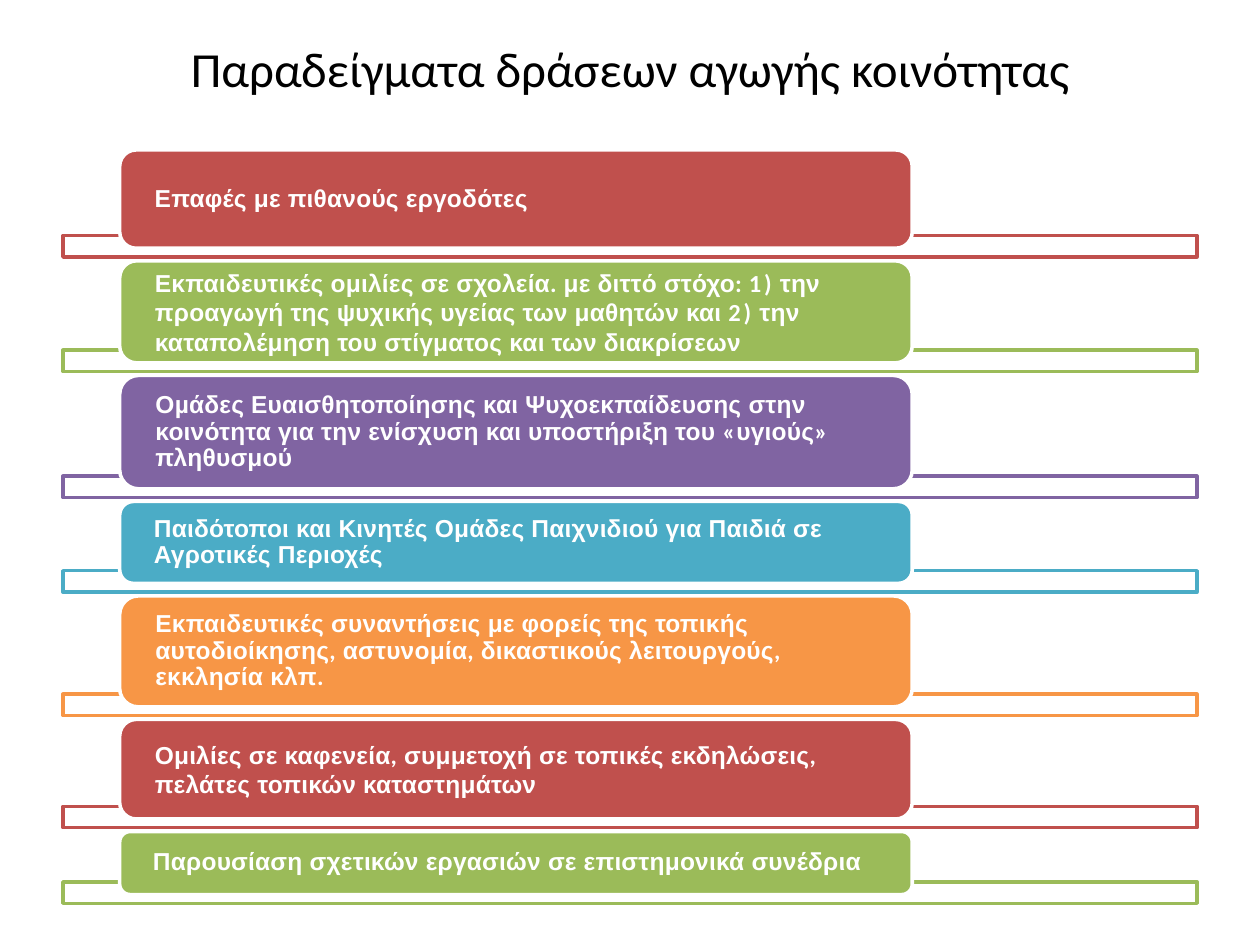
"""Build a slide listing examples of community education actions."""
from dataclasses import dataclass
from itertools import groupby

from lxml.etree import SubElement
from pptx import Presentation
from pptx.dml.color import RGBColor
from pptx.enum.shapes import MSO_SHAPE
from pptx.enum.text import MSO_ANCHOR, PP_ALIGN
from pptx.oxml.ns import qn
from pptx.util import Inches, Pt

COLS, ROWS = 1000, 750
WIDTH, HEIGHT = Inches(10), Inches(7.5)
BAR_LEFT, BAR_COLS, BAR_ROWS = 50, 900, 17
CARD_LEFT, CARD_COLS = 95, 629
FIRST_ROW, GAP, OVERLAP = 119, 10, 10

WHITE = RGBColor(0xFF, 0xFF, 0xFF)
BLACK = RGBColor(0, 0, 0)
RED = RGBColor(0xC0, 0x50, 0x4D)
GREEN = RGBColor(0x9B, 0xBB, 0x59)
PURPLE = RGBColor(0x80, 0x64, 0xA2)
TEAL = RGBColor(0x4B, 0xAC, 0xC6)
ORANGE = RGBColor(0xF7, 0x96, 0x46)

LETTER_STYLE = ("Arial", 10)
SYMBOL_SPACING = {".": 0, ",": 10, ":": -20, "1": 160, "2": 160,
                  ")": 80, "«": 50, "»": 40}


@dataclass
class Action:
    """An action card, its height in grid rows and its line spacing."""
    text: str
    color: RGBColor
    rows: int
    spacing: float = 0.9


ACTIONS = [
    Action("Επαφές με πιθανούς εργοδότες", RED, 78),
    Action("Εκπαιδευτικές ομιλίες σε σχολεία. με διττό στόχο: 1) την "
           "προαγωγή της ψυχικής υγείας των μαθητών και 2) την "
           "καταπολέμηση του στίγματος και των διακρίσεων", GREEN, 81, 1.0),
    Action("Οµάδες Ευαισθητοποίησης και Ψυχοεκπαίδευσης στην κοινότητα "
           "για την ενίσχυση και υποστήριξη του «υγιούς» πληθυσμού", PURPLE, 90),
    Action("Παιδότοποι και Κινητές Ομάδες Παιχνιδιού για Παιδιά σε "
           "Αγροτικές Περιοχές", TEAL, 65),
    Action("Εκπαιδευτικές συναντήσεις με φορείς της τοπικής "
           "αυτοδιοίκησης, αστυνομία, δικαστικούς λειτουργούς, "
           "εκκλησία κλπ.", ORANGE, 88),
    Action("Ομιλίες σε καφενεία, συμμετοχή σε τοπικές εκδηλώσεις, "
           "πελάτες τοπικών καταστημάτων", RED, 79, 1.0),
    Action("Παρουσίαση σχετικών εργασιών σε επιστημονικά συνέδρια", GREEN, 50),
]


def place(col: int, row: int, cols: int, rows: int) -> tuple[int, ...]:
    """Turn grid cells into left, top, width and height."""
    return (WIDTH * col // COLS, HEIGHT * row // ROWS,
            WIDTH * cols // COLS, HEIGHT * rows // ROWS)


def add_box(s, kind: MSO_SHAPE, box: tuple[int, ...], fill: RGBColor, line: RGBColor):
    """Add a filled, outlined shape without a shadow."""
    sp = s.shapes.add_shape(kind, *box)
    sp.shadow.inherit = False
    sp.fill.solid()
    sp.fill.fore_color.rgb = fill
    sp.line.color.rgb = line
    sp.line.width = Pt(2)
    return sp


def char_style(char: str) -> tuple[str, int]:
    """Give the font and letter spacing of a character."""
    if char in SYMBOL_SPACING:
        return "Calibri", SYMBOL_SPACING[char]
    return ("Arial", 0) if char == " " else LETTER_STYLE


def add_bar(s, color: RGBColor, row: int) -> None:
    """Add a nearly opaque white bar with a coloured outline."""
    sp = add_box(s, MSO_SHAPE.RECTANGLE, place(BAR_LEFT, row, BAR_COLS, BAR_ROWS),
                 WHITE, color)
    clr = sp.fill._xPr.find(qn("a:solidFill"))[0]
    SubElement(clr, qn("a:alpha"), val="90000")


def add_card(s, action: Action, row: int) -> None:
    """Add a rounded card holding the action's text."""
    sp = add_box(s, MSO_SHAPE.ROUNDED_RECTANGLE,
                 place(CARD_LEFT, row, CARD_COLS, action.rows), action.color, WHITE)
    tf = sp.text_frame
    tf.word_wrap = True
    tf.vertical_anchor = MSO_ANCHOR.MIDDLE
    tf.margin_left = tf.margin_right = Inches(0.24)
    tf.margin_top = tf.margin_bottom = 0
    p = tf.paragraphs[0]
    p.alignment = PP_ALIGN.LEFT
    p.line_spacing = action.spacing
    for (font, spacing), chars in groupby(action.text, char_style):
        r = p.add_run()
        r.text = "".join(chars)
        r.font.name, r.font.size, r.font.bold = font, Pt(14), True
        r.font.color.rgb = WHITE
        r.font._element.set("spc", str(spacing))


def add_title(s, text: str) -> None:
    """Add the centred slide title."""
    tf = s.shapes.add_textbox(*place(50, 30, 900, 48)).text_frame
    tf.word_wrap = True
    tf.vertical_anchor = MSO_ANCHOR.MIDDLE
    tf.margin_top = tf.margin_bottom = 0
    tf.text = text
    p = tf.paragraphs[0]
    p.alignment = PP_ALIGN.CENTER
    font = p.runs[0].font
    font.name, font.size = "Calibri", Pt(28)
    font.color.rgb = BLACK


def main() -> None:
    """Build and save the slide."""
    prs = Presentation()
    prs.slide_width, prs.slide_height = WIDTH, HEIGHT
    s = prs.slides.add_slide(prs.slide_layouts[6])
    add_title(s, "Παραδείγματα δράσεων αγωγής κοινότητας")
    row = FIRST_ROW
    for action in ACTIONS:
        add_bar(s, action.color, row + action.rows - OVERLAP)
        add_card(s, action, row)
        row += action.rows + GAP
    prs.save("out.pptx")


if __name__ == "__main__":
    main()
